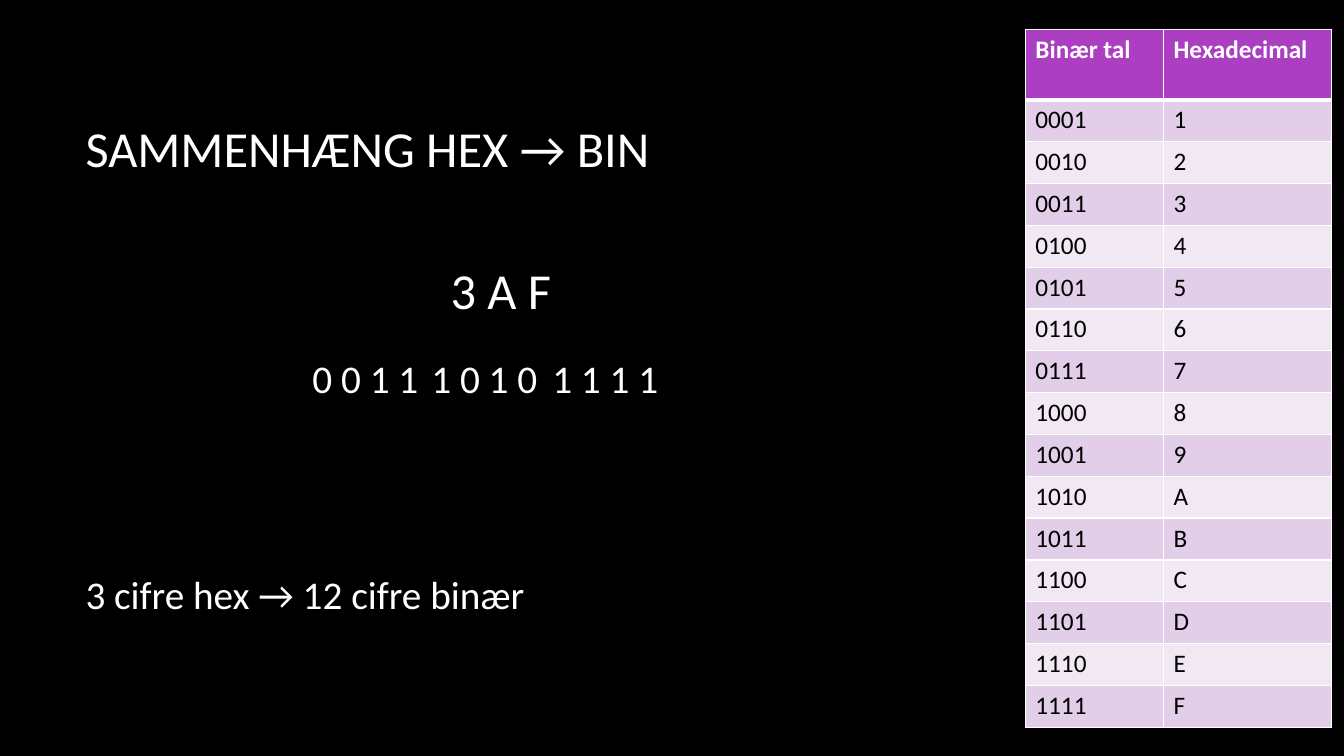
from lxml.etree import SubElement
from pptx import Presentation
from pptx.dml.color import RGBColor
from pptx.enum.text import MSO_ANCHOR
from pptx.oxml.ns import qn
from pptx.util import Inches, Pt

HEADINGS = ("Binær tal", "Hexadecimal")
ROWS = [HEADINGS] + [(f"{number:04b}", f"{number:X}") for number in range(1, 16)]
TEXTS = [
    ("SAMMENHÆNG HEX → BIN", 36, (0.75, 0.67, 9.2, 1.59)),
    ("3 A F", 36, (4.37, 2.52, 1.6, 0.7)),
    ("3 cifre hex → 12 cifre binær", 28, (0.75, 5.61, 9.2, 0.57)),
    ("0 0 1 1", 28, (3, 3.46, 1.31, 0.57)),
    ("1 0 1 0", 28, (4.18, 3.46, 1.59, 0.57)),
    ("1 1 1 1", 28, (5.38, 3.46, 1.83, 0.57)),
]

FONT = "Calibri"
BLACK = RGBColor(0x00, 0x00, 0x00)
WHITE = RGBColor(0xFF, 0xFF, 0xFF)
PURPLE = RGBColor(0xAC, 0x3E, 0xC1)
BANDS = (RGBColor(0xF1, 0xE8, 0xF4), RGBColor(0xE3, 0xCE, 0xE9))

TABLE_LEFT, TABLE_TOP = 10.17, 0.29
COLUMN_WIDTHS = (1.37, 1.67)
HEADER_HEIGHT, ROW_HEIGHT = 0.7, 0.415


def write(para, text, size, color, bold=False):
    span = para.add_run()
    span.text = text
    span.font.name = FONT
    span.font.size = Pt(size)
    span.font.bold = bold
    span.font.color.rgb = color


def add_text(page, text, size, place):
    box = page.shapes.add_textbox(*map(Inches, place))
    box.text_frame.word_wrap = True
    box.text_frame.vertical_anchor = MSO_ANCHOR.MIDDLE
    write(box.text_frame.paragraphs[0], text, size, WHITE)


def add_borders(cell, widths):
    properties = cell._tc.get_or_add_tcPr()
    for side, width in widths.items():
        line = SubElement(properties, qn(f"a:ln{side}"), w=str(Pt(width)))
        fill = SubElement(line, qn("a:solidFill"))
        SubElement(fill, qn("a:srgbClr"), val=str(WHITE))


def add_number_table(page):
    height = HEADER_HEIGHT + ROW_HEIGHT * (len(ROWS) - 1)
    place = (TABLE_LEFT, TABLE_TOP, sum(COLUMN_WIDTHS), height)
    table = page.shapes.add_table(len(ROWS), len(HEADINGS), *map(Inches, place)).table
    for column, width in zip(table.columns, COLUMN_WIDTHS):
        column.width = Inches(width)
    for row, values in enumerate(ROWS):
        header = row == 0
        table.rows[row].height = Inches(HEADER_HEIGHT if header else ROW_HEIGHT)
        for column, value in enumerate(values):
            cell = table.cell(row, column)
            add_borders(cell, {"L": 1, "R": 1, "T": 3 if row == 1 else 1, "B": 3 if header else 1})
            cell.fill.solid()
            cell.fill.fore_color.rgb = PURPLE if header else BANDS[row % 2]
            write(cell.text_frame.paragraphs[0], value, 18, WHITE if header else BLACK, header)


def main():
    deck = Presentation()
    deck.slide_width, deck.slide_height = Inches(13.33), Inches(7.5)
    page = deck.slides.add_slide(deck.slide_layouts[6])
    page.background.fill.solid()
    page.background.fill.fore_color.rgb = BLACK
    for text, size, place in TEXTS:
        add_text(page, text, size, place)
    add_number_table(page)
    deck.save("out.pptx")


if __name__ == "__main__":
    main()
